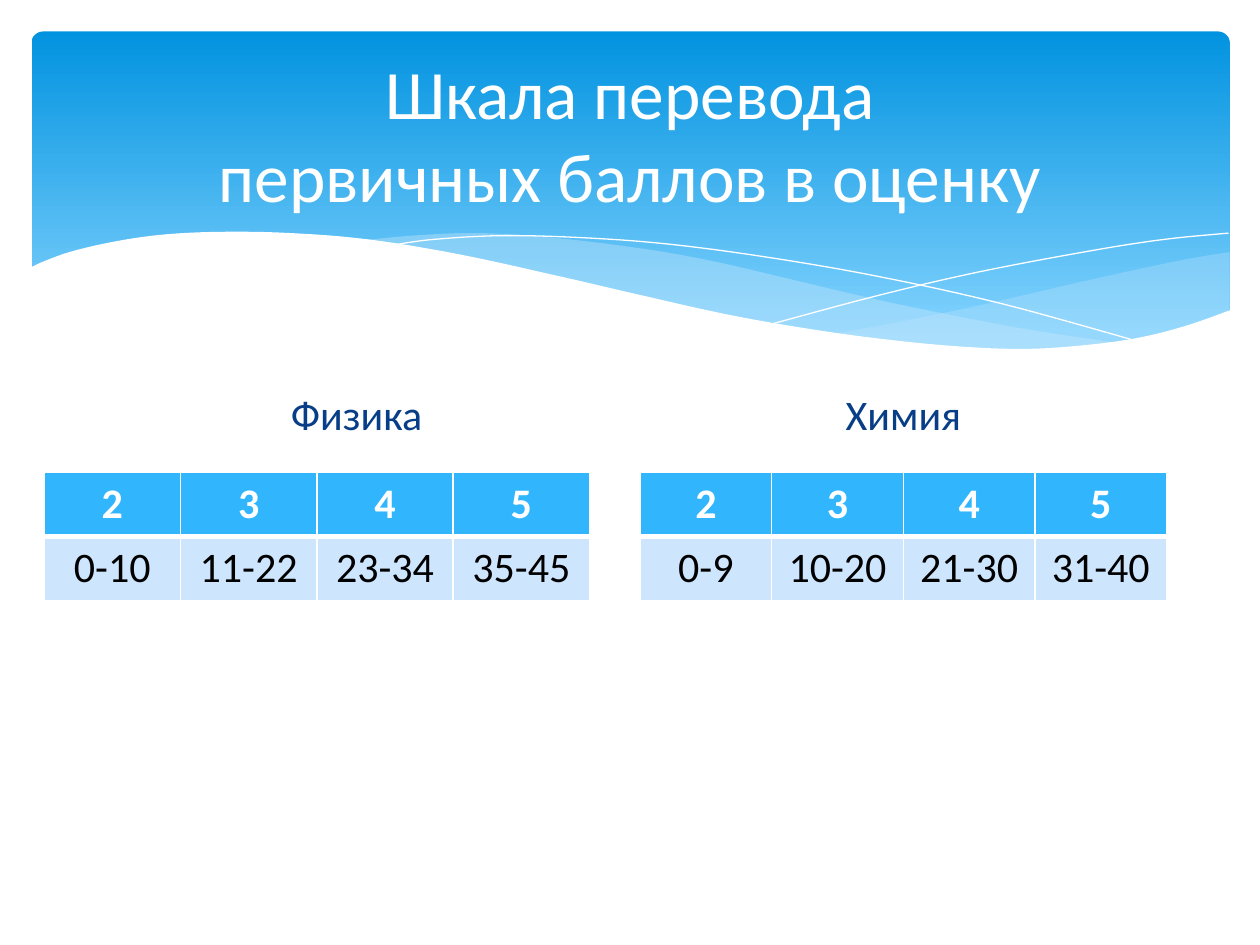
"""Build a slide with the scales that turn raw exam points into grades."""
import pptx
import pptx.dml.color
import pptx.enum.shapes
import pptx.enum.text
import pptx.oxml
import pptx.oxml.ns
import pptx.util
from pptx.util import Inches


def color(hex_string):
    """Return the colour for a hex string."""
    return pptx.dml.color.RGBColor.from_string(hex_string)


def curve(knots, steps=6):
    """Return points in inches on a smooth curve through the knots."""
    padded = [knots[0], *knots, knots[-1]]
    points = [knots[0]]
    for a, b, c, d in zip(padded, padded[1:], padded[2:], padded[3:]):
        for step in range(1, steps + 1):
            t = step / steps
            points.append(tuple(
                q + t * (r - p) / 2 + t**2 * (2 * p - 5 * q + 4 * r - s) / 2
                + t**3 * (3 * q - p - 3 * r + s) / 2
                for p, q, r, s in zip(a, b, c, d)))
    return points


presentation = pptx.Presentation()
presentation.slide_width = Inches(10)
presentation.slide_height = Inches(7.5)
slide = presentation.slides.add_slide(presentation.slide_layouts[4])
title, physics, physics_content, chemistry, chemistry_content = slide.placeholders
for unused in (physics_content, chemistry_content):
    unused.element.getparent().remove(unused.element)

banner = slide.shapes.add_shape(
    pptx.enum.shapes.MSO_SHAPE.ROUNDED_RECTANGLE,
    Inches(0.25), Inches(0.25), Inches(9.51), Inches(2.7))
banner.adjustments[0] = 0.034
banner.shadow.inherit = False
banner.line.fill.background()
banner.fill.gradient()
banner.fill.gradient_angle = 270
for stop, position, shade in zip(banner.fill.gradient_stops, (0, 0.9), ("0293E0", "83D3FE")):
    stop.position = position
    stop.color.rgb = color(shade)

right_wave = curve([(9.76, 2), (9.35, 2.07), (8.61, 2.23), (7.79, 2.42), (7.06, 2.57), (6.61, 2.65)])
right_wave += curve([(6.61, 2.65), (7.05, 2.71), (7.57, 2.76), (8.14, 2.78), (8.63, 2.75),
                     (9.05, 2.69), (9.42, 2.59), (9.76, 2.47)])
middle_wave = curve([(8.93, 2.73), (8.07, 2.6), (7.06, 2.4), (6.29, 2.22), (5.69, 2.08),
                     (5.14, 1.98), (4.42, 1.89), (3.8, 1.85), (3.28, 1.87), (2.86, 1.91)])
middle_wave += curve([(2.86, 1.91), (3.62, 2.03), (4.49, 2.22), (5.3, 2.4), (6.01, 2.55),
                      (6.8, 2.68), (7.48, 2.76), (8.07, 2.78), (8.48, 2.77), (8.93, 2.73)])
falling_line = curve([(3.09, 1.95), (3.44, 1.9), (4.01, 1.87), (4.69, 1.89), (5.33, 1.94),
                      (6.08, 2.04), (6.95, 2.19), (7.95, 2.41), (9.07, 2.72)])
rising_line = curve([(6.13, 2.57), (6.95, 2.35), (7.76, 2.16), (8.66, 1.99), (9.24, 1.9), (9.75, 1.85)])
white_wave = curve([(9.77, 2.46), (9.4, 2.59), (8.99, 2.69), (8.5, 2.75), (8.09, 2.77),
                    (7.61, 2.75), (7.08, 2.7), (6.48, 2.62), (5.79, 2.5), (5.03, 2.33),
                    (4.47, 2.2), (3.65, 2.02), (2.92, 1.9), (2.3, 1.85), (1.77, 1.84),
                    (1.32, 1.86), (0.95, 1.91), (0.59, 1.99), (0.36, 2.07), (0.23, 2.13)])
white_wave += [(0.23, 3.29), (9.77, 3.29)]

for points, fill, opacity in (
        (right_wave, "C6E7FC", 29), (middle_wave, "C6E7FC", 40),
        (falling_line, None, 100), (rising_line, None, 100), (white_wave, "FFFFFF", 100)):
    start, *rest = [(Inches(x), Inches(y)) for x, y in points]
    builder = slide.shapes.build_freeform(*start)
    builder.add_line_segments(rest, close=fill is not None)
    wave = builder.convert_to_shape()
    wave.shadow.inherit = False
    if fill is None:
        wave.fill.background()
        wave.line.color.rgb = color("FFFFFF")
        wave.line.width = pptx.util.Pt(0)
        continue
    wave.line.fill.background()
    wave.fill.solid()
    wave.fill.fore_color.rgb = color(fill)
    if opacity < 100:
        fill_color = next(wave.element.iter(pptx.oxml.ns.qn("a:srgbClr")))
        fill_color.append(pptx.oxml.parse_xml(
            f'<a:alpha {pptx.oxml.ns.nsdecls("a")} val="{opacity * 1000}"/>'))

for heading, text, left, top, width, height, size, shade in (
        (title, "Шкала перевода\vпервичных баллов в оценку", 0.5, 0.37, 9, 1.37, 39.6, "FFFFFF"),
        (physics, "Физика", 0.74, 2.93, 4.18, 0.7, 24, "073E87"),
        (chemistry, "Химия", 5.08, 2.93, 4.18, 0.7, 24, "073E87")):
    slide.shapes.element.append(heading.element)
    heading.left, heading.top = Inches(left), Inches(top)
    heading.width, heading.height = Inches(width), Inches(height)
    frame = heading.text_frame
    frame.text = text
    frame.auto_size = pptx.enum.text.MSO_AUTO_SIZE.NONE
    frame.vertical_anchor = pptx.enum.text.MSO_ANCHOR.MIDDLE
    paragraph = frame.paragraphs[0]
    paragraph.alignment = pptx.enum.text.PP_ALIGN.CENTER
    paragraph.space_before = pptx.util.Pt(0 if heading is title else 4.8)
    paragraph.font.name = "Calibri"
    paragraph.font.size = pptx.util.Pt(size)
    paragraph.font.bold = False
    paragraph.font.color.rgb = color(shade)

grades = ("2", "3", "4", "5")
for left, width, point_ranges in (
        (0.35, 4.33, ("0-10", "11-22", "23-34", "35-45")),
        (5.08, 4.18, ("0-9", "10-20", "21-30", "31-40"))):
    scale = slide.shapes.add_table(
        2, len(grades), Inches(left), Inches(3.75), Inches(width), Inches(1)).table
    for row, (values, fill, shade) in enumerate((
            (grades, "31B6FD", "FFFFFF"), (point_ranges, "CEE5FE", "000000"))):
        for column, value in enumerate(values):
            cell = scale.cell(row, column)
            cell.text = value
            paragraph = cell.text_frame.paragraphs[0]
            paragraph.alignment = pptx.enum.text.PP_ALIGN.CENTER
            paragraph.font.name = "Calibri"
            paragraph.font.size = pptx.util.Pt(24)
            paragraph.font.bold = row == 0
            paragraph.font.color.rgb = color(shade)
            properties = cell._tc.get_or_add_tcPr()
            divider = "B" if row == 0 else "T"
            for side in "LRTB":
                thickness = pptx.util.Pt(3 if side == divider else 1)
                properties.append(pptx.oxml.parse_xml(
                    f'<a:ln{side} {pptx.oxml.ns.nsdecls("a")} w="{thickness}"><a:solidFill>'
                    f'<a:srgbClr val="FFFFFF"/></a:solidFill></a:ln{side}>'))
            cell.fill.solid()
            cell.fill.fore_color.rgb = color(fill)

presentation.save("out.pptx")
